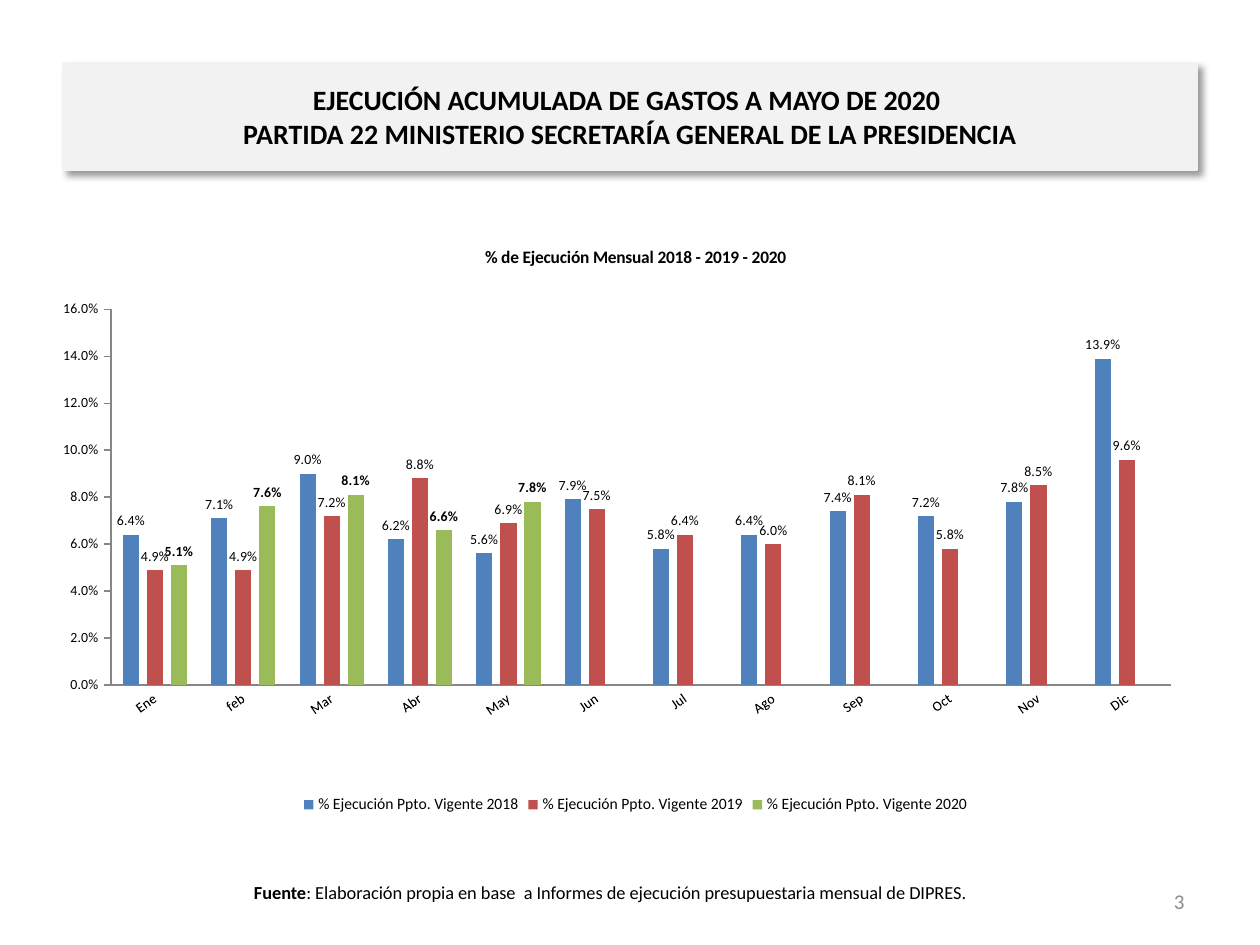
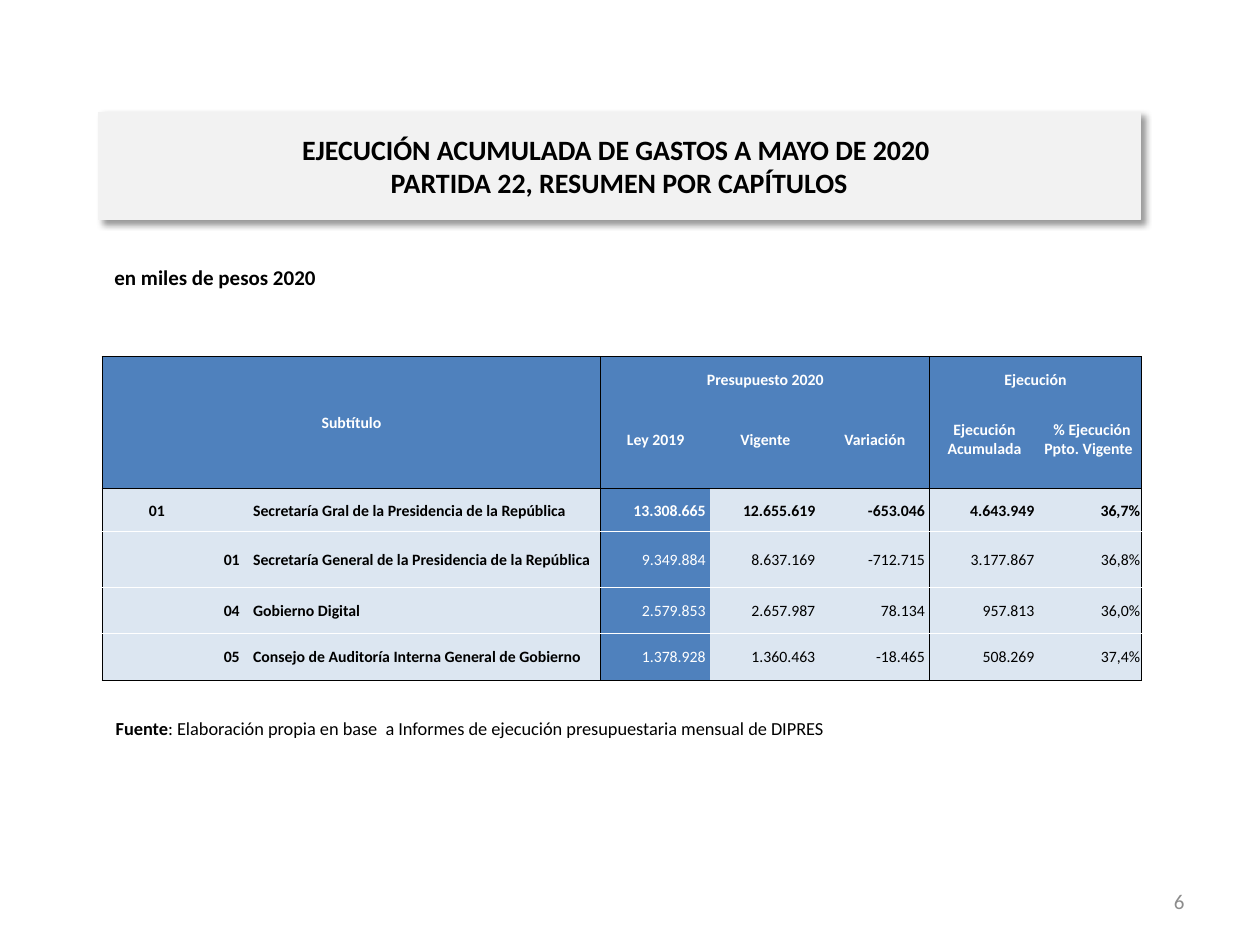
from lxml import etree
from pptx import Presentation
from pptx.chart.data import CategoryChartData
from pptx.dml.color import RGBColor
from pptx.enum.chart import XL_CHART_TYPE as ChartType, XL_LABEL_POSITION as LabelPosition
from pptx.enum.chart import XL_LEGEND_POSITION as LegendPosition, XL_TICK_MARK as TickMark
from pptx.enum.text import MSO_ANCHOR as Anchor, MSO_AUTO_SIZE as AutoSize, PP_ALIGN as Align
from pptx.oxml import parse_xml
from pptx.oxml.ns import nsdecls, qn
from pptx.util import Inches, Pt

BLACK = RGBColor(0x00, 0x00, 0x00)
WHITE = RGBColor(0xFF, 0xFF, 0xFF)
BAND_GRAY = RGBColor(0xF2, 0xF2, 0xF2)
NUMBER_GRAY = RGBColor(0x8C, 0x8C, 0x8C)
AXIS_GRAY = RGBColor(0x86, 0x86, 0x86)
BLUE = RGBColor(0x4F, 0x81, 0xBD)
RED = RGBColor(0xC0, 0x50, 0x4D)
GREEN = RGBColor(0x9B, 0xBB, 0x59)
PALE_BLUE = RGBColor(0xDC, 0xE6, 0xF1)

FONT = "Calibri"
TITLE_START = "EJECUCIÓN ACUMULADA DE GASTOS A MAYO DE 2020 "
SOURCE = ": Elaboración propia en base  a Informes de ejecución presupuestaria mensual de DIPRES"
PAGE_NUMBER_BOX = (7.17, 6.95, 2.33, 0.4)

CHART_TITLE = "% de Ejecución Mensual 2018 - 2019 - 2020"
MONTHS = ["Ene", "feb", "Mar", "Abr", "May", "Jun", "Jul", "Ago", "Sep", "Oct", "Nov", "Dic"]
SERIES = [
    ("% Ejecución Ppto. Vigente 2018", BLUE, False,
     [0.064, 0.071, 0.09, 0.062, 0.056, 0.079, 0.058, 0.064, 0.074, 0.072, 0.078, 0.139]),
    ("% Ejecución Ppto. Vigente 2019", RED, False,
     [0.049, 0.049, 0.072, 0.088, 0.069, 0.075, 0.064, 0.06, 0.081, 0.058, 0.085, 0.096]),
    ("% Ejecución Ppto. Vigente 2020", GREEN, True,
     [0.051, 0.076, 0.081, 0.066, 0.078] + [None] * 7),
]
PLOT_LAYOUT = {"x": 0.033, "y": 0.143, "w": 0.944, "h": 0.632}

TABLE_ROWS = [
    ["Subtítulo", "", "", "Presupuesto 2020", "", "", "Ejecución", ""],
    ["", "", "", "Ley 2019", "Vigente", "Variación", "Ejecución Acumulada",
     " % Ejecución Ppto. Vigente "],
    ["01", "", "Secretaría Gral de la Presidencia de la República",
     "13.308.665 ", "12.655.619 ", "-653.046 ", "4.643.949 ", "36,7%"],
    ["", "01", "Secretaría General de la Presidencia de la República",
     "9.349.884 ", "8.637.169 ", "-712.715 ", "3.177.867 ", "36,8%"],
    ["", "04", "Gobierno Digital",
     "2.579.853 ", "2.657.987 ", "78.134 ", "957.813 ", "36,0%"],
    ["", "05", "Consejo de Auditoría Interna General de Gobierno",
     "1.378.928 ", "1.360.463 ", "-18.465 ", "508.269 ", "37,4%"],
]
COLUMN_WIDTHS = [0.87, 0.32, 2.77, 0.87, 0.87, 0.87, 0.87, 0.81]
ROW_HEIGHTS = [0.26, 0.79, 0.34, 0.44, 0.37, 0.37]
MERGES = [((0, 0), (1, 2)), ((0, 3), (0, 5)), ((0, 6), (0, 7))]
HEADER_ROWS = 2
NAME_COLUMN = 2
LAW_COLUMN = 3
GROUP_STARTS = (0, 3, 6)
GROUP_ENDS = (2, 5, 7)


def apply_format(target, values):
    for name, value in values.items():
        setattr(target, name, value)


def format_font(font, size, color=BLACK, bold=False):
    apply_format(font, {"name": FONT, "size": Pt(size), "bold": bold})
    font.color.rgb = color


def box_inches(box):
    return [Inches(length) for length in box]


def add_text(slide, box, runs, size, color=BLACK, align=Align.LEFT, anchor=Anchor.TOP):
    frame = slide.shapes.add_textbox(*box_inches(box)).text_frame
    apply_format(frame, {"word_wrap": True, "vertical_anchor": anchor})
    paragraph = frame.paragraphs[0]
    paragraph.alignment = align
    for text, bold in runs:
        run = paragraph.add_run()
        run.text = text
        format_font(run.font, size, color, bold)


def add_titled_slide(presentation, box, second_line, page_number):
    slide = presentation.slides.add_slide(presentation.slide_layouts[5])
    title = slide.shapes.title
    apply_format(title, dict(zip(("left", "top", "width", "height"), box_inches(box))))
    title.fill.solid()
    title.fill.fore_color.rgb = BAND_GRAY
    title.line.color.rgb = BAND_GRAY
    title.line.width = Pt(0.75)
    title._element.spPr.append(parse_xml(
        f'<a:effectLst {nsdecls("a")}><a:outerShdw blurRad="{Pt(4)}" dist="{Pt(3)}" '
        f'dir="2700000" algn="tl" rotWithShape="0"><a:srgbClr val="{BLACK}">'
        '<a:alpha val="40000"/></a:srgbClr></a:outerShdw></a:effectLst>'))
    frame = title.text_frame
    apply_format(frame, {"auto_size": AutoSize.NONE, "word_wrap": True,
                         "vertical_anchor": Anchor.MIDDLE})
    paragraph = frame.paragraphs[0]
    paragraph.alignment = Align.CENTER
    for index, text in enumerate((TITLE_START, second_line)):
        if index:
            paragraph.add_line_break()
        run = paragraph.add_run()
        run.text = text
        format_font(run.font, 16, bold=True)
    add_text(slide, PAGE_NUMBER_BOX, [(page_number, False)], 12, NUMBER_GRAY,
             Align.RIGHT, Anchor.MIDDLE)
    return slide


def set_plot_layout(chart):
    plot_area = chart._chartSpace.find(qn("c:chart")).find(qn("c:plotArea"))
    for layout in plot_area.findall(qn("c:layout")):
        plot_area.remove(layout)
    layout = etree.Element(qn("c:layout"))
    manual = etree.SubElement(layout, qn("c:manualLayout"))
    settings = {"layoutTarget": "inner", "xMode": "edge", "yMode": "edge", **PLOT_LAYOUT}
    for name, value in settings.items():
        etree.SubElement(manual, qn(f"c:{name}")).set("val", str(value))
    plot_area.insert(0, layout)


def add_execution_chart(slide, box):
    data = CategoryChartData(number_format="0.0%")
    data.categories = MONTHS
    for name, _, _, values in SERIES:
        data.add_series(name, values)
    chart = slide.shapes.add_chart(
        ChartType.COLUMN_CLUSTERED, *box_inches(box), data).chart
    format_font(chart.font, 10)
    chart.has_title = True
    chart.chart_title.text_frame.text = CHART_TITLE
    format_font(chart.chart_title.text_frame.paragraphs[0].runs[0].font, 10, bold=True)
    chart.has_legend = True
    apply_format(chart.legend, {"position": LegendPosition.BOTTOM, "include_in_layout": False})
    format_font(chart.legend.font, 9)

    plot = chart.plots[0]
    apply_format(plot, {"gap_width": 150, "overlap": -49, "vary_by_categories": False})
    for series, (_, color, bold, _) in zip(plot.series, SERIES):
        series.format.fill.solid()
        series.format.fill.fore_color.rgb = color
        labels = series.data_labels
        apply_format(labels, {"show_value": True, "number_format": "0.0%",
                              "number_format_is_linked": False,
                              "position": LabelPosition.OUTSIDE_END})
        format_font(labels.font, 8, bold=bold)

    for axis, tick in ((chart.category_axis, TickMark.NONE), (chart.value_axis, TickMark.OUTSIDE)):
        apply_format(axis, {"major_tick_mark": tick, "minor_tick_mark": TickMark.NONE,
                            "has_major_gridlines": False})
        axis.format.line.color.rgb = AXIS_GRAY
        format_font(axis.tick_labels.font, 8)
    apply_format(chart.value_axis, {"minimum_scale": 0, "maximum_scale": 0.16,
                                    "major_unit": 0.02})
    apply_format(chart.value_axis.tick_labels, {"number_format": "0.0%",
                                                "number_format_is_linked": False})
    category_text = chart.category_axis._element.find(qn("c:txPr")).find(qn("a:bodyPr"))
    category_text.set("rot", "-2100000")
    set_plot_layout(chart)


def set_borders(cell, row, column):
    last_row = row + cell.span_height - 1
    last_column = column + cell.span_width - 1
    final_row = len(TABLE_ROWS) - 1
    body_line = WHITE if row >= HEADER_ROWS else None
    edges = {
        "lnL": BLACK if column in GROUP_STARTS else None,
        "lnR": BLACK if last_column in GROUP_ENDS else None,
        "lnT": BLACK if row in (0, HEADER_ROWS) else body_line,
        "lnB": BLACK if last_row in (HEADER_ROWS - 1, final_row) else body_line,
    }
    properties = cell._tc.get_or_add_tcPr()
    for name, color in edges.items():
        line = etree.SubElement(properties, qn(f"a:{name}"), w=str(Pt(0.5)))
        if color is None:
            etree.SubElement(line, qn("a:noFill"))
        else:
            fill = etree.SubElement(line, qn("a:solidFill"))
            etree.SubElement(fill, qn("a:srgbClr"), val=str(color))


def format_cell(cell, row, column, text):
    is_header = row < HEADER_ROWS
    is_blue = is_header or column == LAW_COLUMN
    set_borders(cell, row, column)
    cell.fill.solid()
    cell.fill.fore_color.rgb = BLUE if is_blue else PALE_BLUE
    anchor = Anchor.BOTTOM if row == 0 and column >= LAW_COLUMN else Anchor.MIDDLE
    apply_format(cell, {"margin_left": Inches(0.01), "margin_right": Inches(0.01),
                        "margin_top": Inches(0.01), "margin_bottom": 0,
                        "vertical_anchor": anchor})
    paragraph = cell.text_frame.paragraphs[0]
    if is_header or column < NAME_COLUMN:
        paragraph.alignment = Align.CENTER
    else:
        paragraph.alignment = Align.JUSTIFY if column == NAME_COLUMN else Align.RIGHT
    bold = row <= HEADER_ROWS or column <= NAME_COLUMN
    format_font(paragraph.font, 9, WHITE if is_blue else BLACK, bold)
    if text:
        run = paragraph.add_run()
        run.text = text
        format_font(run.font, 9, WHITE if is_blue else BLACK, bold)


def add_budget_table(slide, left, top):
    box = (left, top, sum(COLUMN_WIDTHS), sum(ROW_HEIGHTS))
    table = slide.shapes.add_table(
        len(ROW_HEIGHTS), len(COLUMN_WIDTHS), *box_inches(box)).table
    apply_format(table, {"first_row": False, "horz_banding": False})
    for column, width in zip(table.columns, COLUMN_WIDTHS):
        column.width = Inches(width)
    for row, height in zip(table.rows, ROW_HEIGHTS):
        row.height = Inches(height)
    for first, last in MERGES:
        table.cell(*first).merge(table.cell(*last))
    for row, texts in enumerate(TABLE_ROWS):
        for column, text in enumerate(texts):
            format_cell(table.cell(row, column), row, column, text)


def main():
    presentation = Presentation()
    presentation.slide_width = Inches(10)
    presentation.slide_height = Inches(7.5)

    monthly = add_titled_slide(presentation, (0.5, 0.5, 9, 0.85),
                               "PARTIDA 22 MINISTERIO SECRETARÍA GENERAL DE LA PRESIDENCIA", "3")
    add_text(monthly, (1.46, 6.88, 6.77, 0.4), [("Fuente", True), (SOURCE + ".", False)],
             10.5, align=Align.CENTER, anchor=Anchor.MIDDLE)
    add_execution_chart(monthly, (0.5, 1.78, 9, 4.72))

    chapters = add_titled_slide(presentation, (0.78, 0.89, 8.27, 0.85),
                                "PARTIDA 22, RESUMEN POR CAPÍTULOS", "6")
    add_text(chapters, (0.82, 5.64, 7.72, 0.4), [("Fuente", True), (SOURCE, False)], 10.5)
    add_text(chapters, (0.81, 2.05, 8.19, 0.36), [("en miles de pesos 2020", True)], 12)
    add_budget_table(chapters, 0.81, 2.83)

    presentation.save("out.pptx")


if __name__ == "__main__":
    main()
